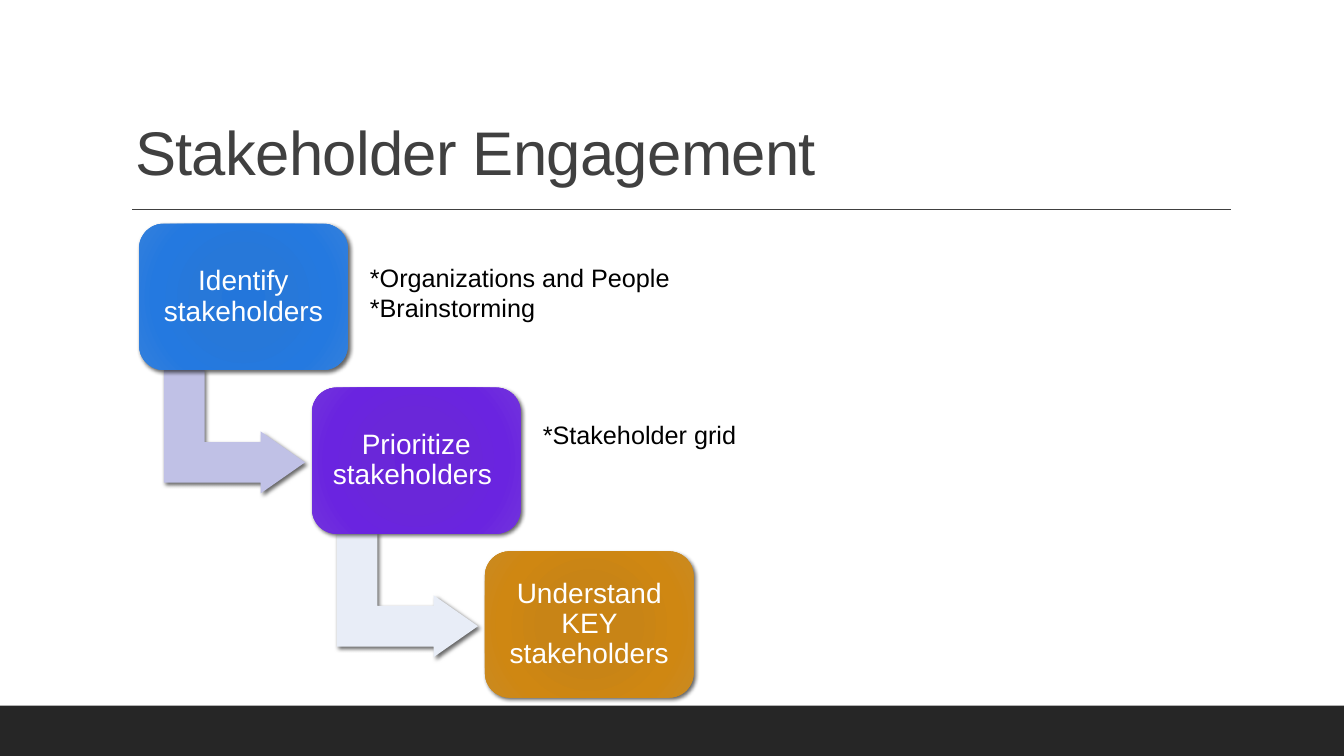
from lxml import etree
from pptx import Presentation
from pptx.dml.color import RGBColor
from pptx.enum.shapes import MSO_CONNECTOR, MSO_SHAPE
from pptx.enum.text import MSO_ANCHOR, MSO_AUTO_SIZE, PP_ALIGN
from pptx.oxml import parse_xml
from pptx.oxml.ns import qn
from pptx.util import Inches, Pt

TITLE = "Stakeholder Engagement"
# step text, gradient colours, colour of the arrow to the next step, notes
STEPS = [
    ("Identify stakeholders", ("2376DB", "2778D9", "2479E0", "3480DC"), "C0C1E6",
     ["*Organizations and People", "*Brainstorming"]),
    ("Prioritize stakeholders ", ("6823DB", "6A27D9", "6A24E0", "7334DC"), "E8EDF7",
     ["*Stakeholder grid"]),
    ("Understand KEY stakeholders", ("CA8412", "C88416", "CF8712", "CA8A22"), None, []),
]
NOTE_TOPS = [2.55, 4.11]
COLORS = {"bar": "262626", "title": "404040", "step": "FFFFFF", "note": "000000"}
FONT = "Arial"
GRADIENT_STOPS = (0, 34, 70, 100)

# Staircase geometry, in inches
LEFT, TOP = 1.38, 2.22
STEP_X, STEP_Y = 1.715, 1.625
BOX_WIDTH, BOX_HEIGHT = 2.07, 1.45
ARROW_X, ARROW_Y, ARROW_WIDTH, ARROW_HEIGHT = 0.33, 1.36, 1.23, 1.4
NOTE_X, NOTE_WIDTH = 2.19, 4.59

ROUNDED, BENT_ARROW = MSO_SHAPE.ROUNDED_RECTANGLE, MSO_SHAPE.BENT_UP_ARROW
DRAWING = 'xmlns:a="http://schemas.openxmlformats.org/drawingml/2006/main"'


def color(value):
    return RGBColor.from_string(value)


def set_font(para, size, value):
    para.font.name = FONT
    para.font.size = Pt(size)
    para.font.color.rgb = color(value)


def add_plain_shape(slide, kind, left, top, width, height):
    shape = slide.shapes.add_shape(
        kind, Inches(left), Inches(top), Inches(width), Inches(height))
    shape.shadow.inherit = False
    shape.line.fill.background()
    return shape


def fill_solid(shape, value):
    shape.fill.solid()
    shape.fill.fore_color.rgb = color(value)


def fill_radial(shape, values):
    stops = "".join(
        f'<a:gs pos="{stop * 1000}"><a:srgbClr val="{value}"/></a:gs>'
        for stop, value in zip(GRADIENT_STOPS, values))
    gradient = parse_xml(
        f'<a:gradFill {DRAWING} rotWithShape="1"><a:gsLst>{stops}</a:gsLst>'
        '<a:path path="circle"><a:fillToRect l="100000" t="100000" r="100000" b="100000"/>'
        '</a:path></a:gradFill>')
    shape._element.spPr.find(qn("a:prstGeom")).addnext(gradient)


def add_shadow(shape):
    shape._element.spPr.find(qn("a:effectLst")).append(parse_xml(
        f'<a:outerShdw {DRAWING} blurRad="38100" dist="25400" dir="2700000" '
        'algn="br" rotWithShape="0"><a:srgbClr val="000000"><a:alpha val="60000"/>'
        '</a:srgbClr></a:outerShdw>'))


def add_arrow(slide, left, top, value):
    arrow = add_plain_shape(slide, BENT_ARROW, left, top, ARROW_WIDTH, ARROW_HEIGHT)
    arrow.rotation = 90
    for index, adjustment in enumerate((0.328, 0.25, 0.358)):
        arrow.adjustments[index] = adjustment
    fill_solid(arrow, value)
    add_shadow(arrow)


def add_step(slide, left, top, text, values):
    box = add_plain_shape(slide, ROUNDED, left, top, BOX_WIDTH, BOX_HEIGHT)
    box.adjustments[0] = 0.167
    fill_radial(box, values)
    add_shadow(box)
    frame = box.text_frame
    frame.word_wrap = True
    frame.vertical_anchor = MSO_ANCHOR.MIDDLE
    frame.margin_left = frame.margin_right = Inches(0.08)
    frame.margin_top = frame.margin_bottom = Inches(0.08)
    para = frame.paragraphs[0]
    para.text = text
    para.alignment = PP_ALIGN.CENTER
    para.line_spacing = 0.9
    set_font(para, 20, COLORS["step"])


def add_notes(slide, left, top, lines):
    height = 0.1 + 0.3 * len(lines)
    box = slide.shapes.add_textbox(
        Inches(left), Inches(top), Inches(NOTE_WIDTH), Inches(height))
    frame = box.text_frame
    frame.word_wrap = True
    frame.auto_size = MSO_AUTO_SIZE.SHAPE_TO_FIT_TEXT
    frame.text = "\n".join(lines)
    for para in frame.paragraphs:
        set_font(para, 18, COLORS["note"])


def add_title(slide):
    title = slide.shapes.title
    title.left, title.top = Inches(1.24), Inches(1.04)
    title.width, title.height = Inches(11), Inches(0.88)
    frame = title.text_frame
    frame.text = TITLE
    frame.auto_size = MSO_AUTO_SIZE.NONE
    frame.vertical_anchor = MSO_ANCHOR.BOTTOM
    para = frame.paragraphs[0]
    para.alignment = PP_ALIGN.LEFT
    para.line_spacing = 0.9
    set_font(para, 44, COLORS["title"])
    para.runs[0].font._element.set("spc", "-50")


def main():
    deck = Presentation()
    deck.slide_width, deck.slide_height = Inches(13.33), Inches(7.5)
    slide = deck.slides.add_slide(deck.slide_layouts[5])

    # Footer bar, title and rule
    fill_solid(add_plain_shape(slide, MSO_SHAPE.RECTANGLE, 0, 7, 13.33, 0.5), COLORS["bar"])
    add_title(slide)
    rule = slide.shapes.add_connector(
        MSO_CONNECTOR.STRAIGHT, Inches(1.31), Inches(2.08), Inches(12.21), Inches(2.08))
    rule.line.color.rgb = color(COLORS["title"])
    rule.line.width = Pt(1)
    etree.SubElement(rule._element.spPr, qn("a:effectLst"))

    # Staircase of steps, each arrow behind its box
    for index, (text, values, arrow_color, _) in enumerate(STEPS):
        left, top = LEFT + index * STEP_X, TOP + index * STEP_Y
        if arrow_color:
            add_arrow(slide, left + ARROW_X, top + ARROW_Y, arrow_color)
        add_step(slide, left, top, text, values)

    # Notes beside the steps
    for index, top in enumerate(NOTE_TOPS):
        add_notes(slide, LEFT + index * STEP_X + NOTE_X, top, STEPS[index][3])

    deck.save("out.pptx")


if __name__ == "__main__":
    main()
